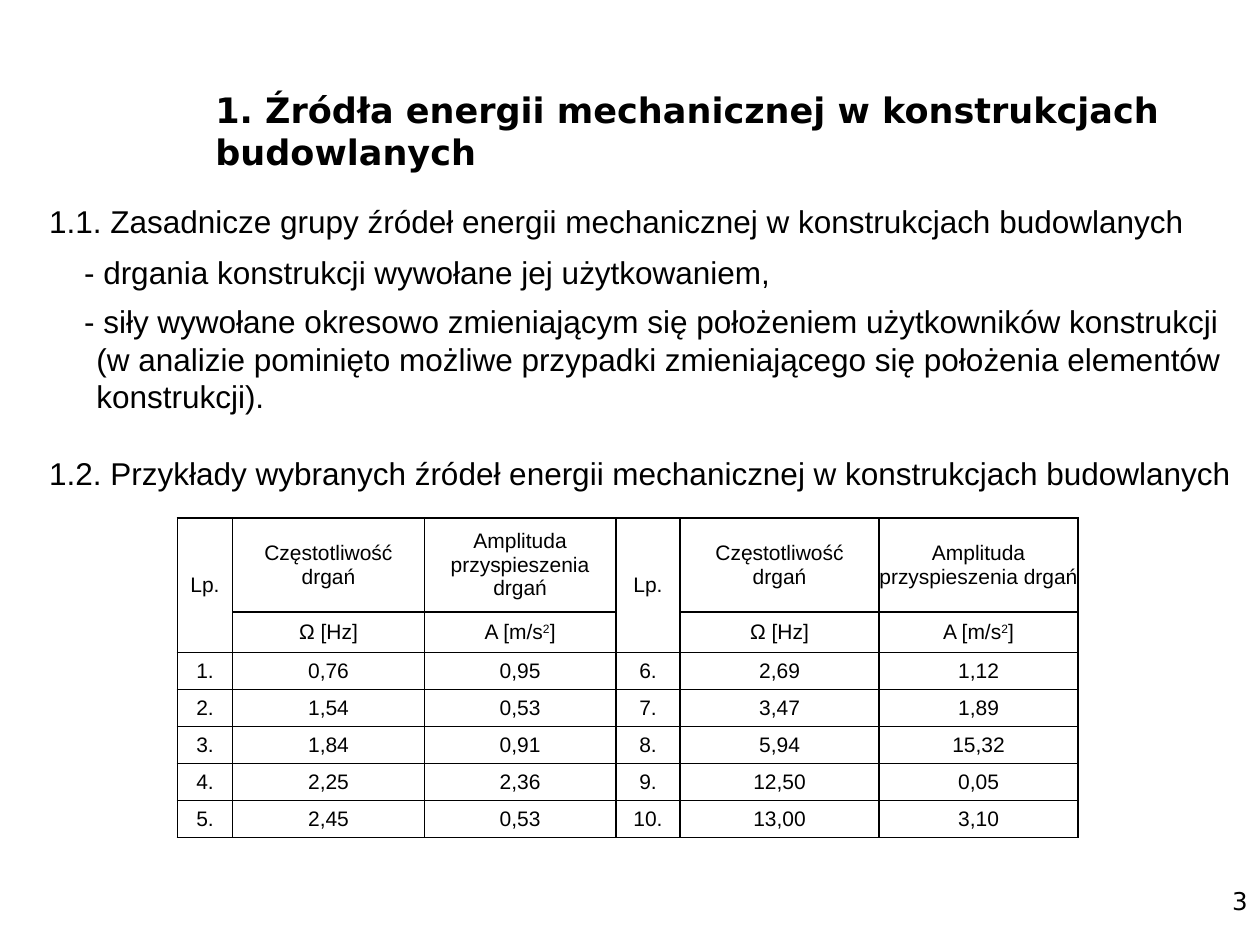
from lxml import etree
from pptx import Presentation
from pptx.dml.color import RGBColor
from pptx.enum import text
from pptx.oxml import ns
from pptx.util import Pt

COLOURS = {"ink": "000000", "paper": "FFFFFF"}


class SlideBuilder:
    """Holds the style and the current slide."""

    body_font = "Arial"
    heading_font = "DejaVu Sans"

    def __init__(self, slide):
        self.slide = slide
        slide.background.fill.solid()
        slide.background.fill.fore_color.rgb = RGBColor.from_string(COLOURS["paper"])

    def style(self, paragraph, size, font, bold=False, align=None):
        paragraph.font.size = Pt(size)
        paragraph.font.name = font
        paragraph.font.bold = bold
        paragraph.font.color.rgb = RGBColor.from_string(COLOURS["ink"])
        paragraph.alignment = align

    def text_box(self, box, lines, size=18, font=body_font, bold=False,
                 align=None, anchor=text.MSO_ANCHOR.TOP):
        frame = self.slide.shapes.add_textbox(*map(Pt, box)).text_frame
        frame.word_wrap = True
        frame.vertical_anchor = anchor
        frame.text = "\n".join(lines)
        for paragraph in frame.paragraphs:
            self.style(paragraph, size, font, bold, align)
        return frame.paragraphs

    def border(self, cell):
        properties = cell._tc.get_or_add_tcPr()
        for side in "LRTB":
            line = etree.SubElement(properties, ns.qn(f"a:ln{side}"), w=str(Pt(1)))
            fill = etree.SubElement(line, ns.qn("a:solidFill"))
            etree.SubElement(fill, ns.qn("a:srgbClr"), val=COLOURS["ink"])

    def cell(self, cell, value):
        self.border(cell)
        cell.fill.background()
        cell.margin_left = cell.margin_right = cell.margin_top = cell.margin_bottom = 0
        cell.vertical_anchor = text.MSO_ANCHOR.MIDDLE
        frame = cell.text_frame
        base, caret, power = value.partition("^")
        frame.text = base
        if caret:
            exponent, closing = frame.paragraphs[0].add_run(), frame.paragraphs[0].add_run()
            exponent.text, closing.text = power[0], power[1:]
            exponent._r.get_or_add_rPr().set("baseline", "30000")
        for paragraph in frame.paragraphs:
            self.style(paragraph, 12, self.body_font, align=text.PP_ALIGN.CENTER)

    def table(self, left, top, widths, heights, rows, merges):
        table = self.slide.shapes.add_table(
            len(rows), len(widths), Pt(left), Pt(top),
            Pt(sum(widths)), Pt(sum(heights))).table
        table.first_row = table.horz_banding = False
        for column, width in zip(table.columns, widths):
            column.width = Pt(width)
        for row, height in zip(table.rows, heights):
            row.height = Pt(height)
        for r, values in enumerate(rows):
            for c, value in enumerate(values):
                self.cell(table.cell(r, c), value)
        for start, end in merges:
            table.cell(*start).merge(table.cell(*end))


def main():
    deck = Presentation()
    deck.slide_width, deck.slide_height = Pt(720), Pt(540)
    builder = SlideBuilder(deck.slides.add_slide(deck.slide_layouts[6]))

    builder.text_box((552.4, 502.5, 167.6, 37.5), ["3"], 14, builder.heading_font,
                     align=text.PP_ALIGN.RIGHT)
    builder.text_box((116, 37.5, 568, 74), ["1. Źródła energii mechanicznej w konstrukcjach budowlanych"],
                     20, builder.heading_font, True, anchor=text.MSO_ANCHOR.MIDDLE)
    vibrations, forces = builder.text_box((41, 141.3, 679, 101), [
        "- drgania konstrukcji wywołane jej użytkowaniem,",
        "- siły wywołane okresowo zmieniającym się położeniem użytkowników konstrukcji "
        "(w analizie pominięto możliwe przypadki zmieniającego się położenia elementów konstrukcji).",
    ])
    vibrations.space_after = Pt(6)
    indent = forces._p.get_or_add_pPr()
    indent.set("marL", str(Pt(7)))
    indent.set("indent", str(Pt(-7)))

    sections = {
        111.8: "1.1. Zasadnicze grupy źródeł energii mechanicznej w konstrukcjach budowlanych",
        255.8: "1.2. Przykłady wybranych źródeł energii mechanicznej w konstrukcjach budowlanych",
    }
    for top, heading in sections.items():
        builder.text_box((21, top, 699, 29), [heading])

    headers = ["Lp.", "Częstotliwość\ndrgań", "Amplituda\nprzyspieszenia drgań"]
    units = ["", "Ω [Hz]", "A [m/s^2]"]
    frequencies = ["0,76", "1,54", "1,84", "2,25", "2,45", "2,69", "3,47", "5,94", "12,50", "13,00"]
    amplitudes = ["0,95", "0,53", "0,91", "2,36", "0,53", "1,12", "1,89", "15,32", "0,05", "3,10"]
    sources = [[f"{number}.", *pair]
               for number, pair in enumerate(zip(frequencies, amplitudes), 1)]
    half = len(sources) // 2
    rows = [headers * 2, units * 2]
    rows += [first + second for first, second in zip(sources[:half], sources[half:])]
    builder.table(101.3, 296, [31.7, 109.5, 109.5, 36.7, 113.7, 113.7],
                  [53.8, 23.2] + [21.15] * half, rows,
                  [((0, c), (1, c)) for c in (0, 3)])
    deck.save("out.pptx")


if __name__ == "__main__":
    main()
